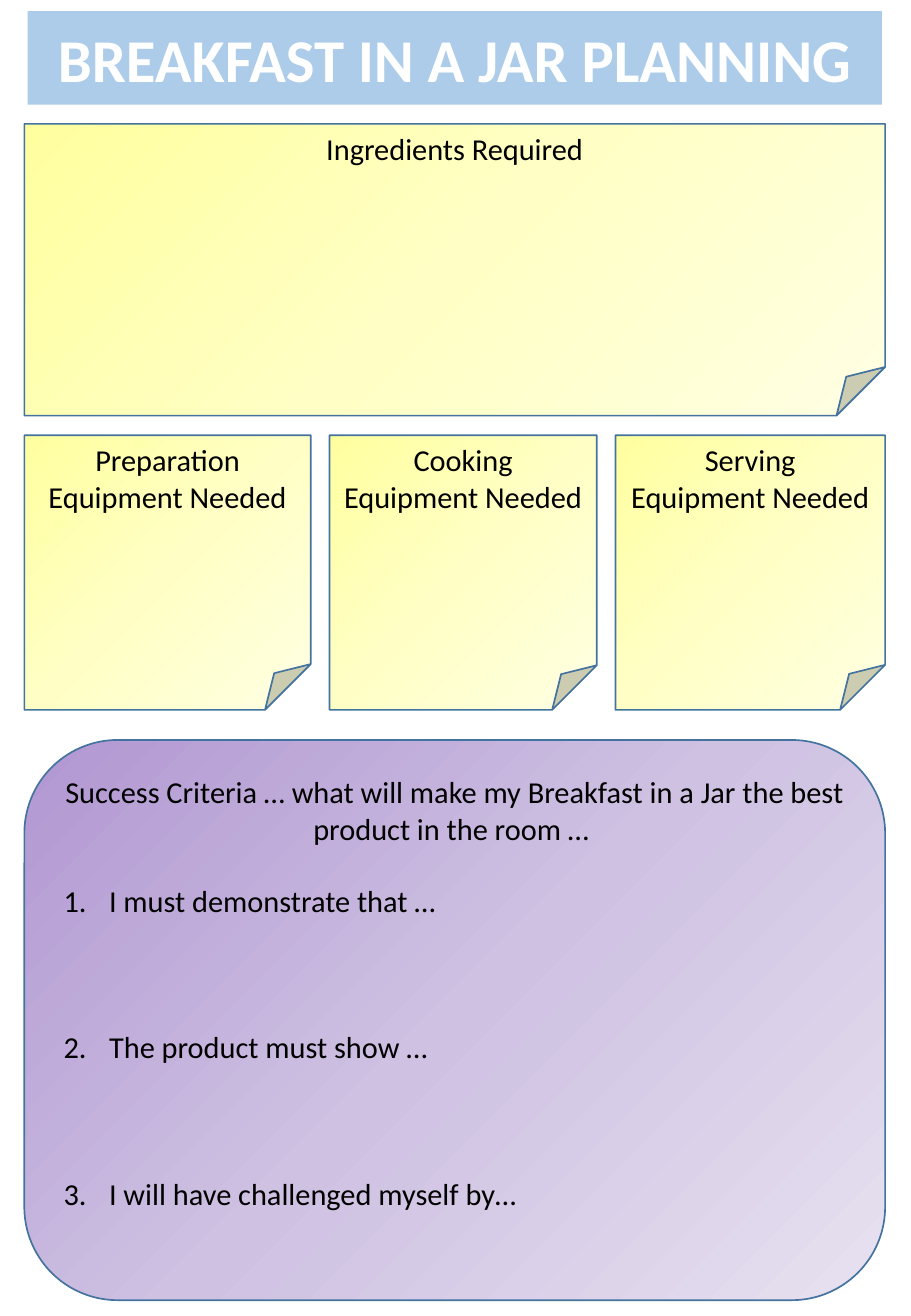
from copy import deepcopy

from lxml import etree
from pptx import Presentation
from pptx.dml import color
from pptx.enum import shapes, text
from pptx.oxml import ns
from pptx.util import Cm, Pt

COLORS = {
    "banner": "5B9BD5",
    "outline": "43739E",
    "ink": "000000",
    "white": "FFFFFF",
}
NOTE_YELLOW = ["FFFFA0", "FFFFC5", "FFFFE3"]
PANEL_PURPLE = ["B197D2", "CEC1E2", "E7E1F0"]
LEFT = 0.51
FULL_WIDTH = 18.0
GAP = 0.39


def add_line(para, words, size=18, ink="ink", bold=False):
    span = para.add_run()
    span.text = words
    span.font.name = "Calibri"
    span.font.size = Pt(size)
    span.font.bold = bold
    span.font.color.rgb = color.RGBColor.from_string(COLORS[ink])


def add_panel(kind, left, top, width, height, gradient, lines):
    panel = page.shapes.add_shape(kind, Cm(left), Cm(top), Cm(width), Cm(height))
    panel.shadow.inherit = False
    panel.line.color.rgb = color.RGBColor.from_string(COLORS["outline"])
    panel.line.width = Pt(1)
    panel.fill.gradient()
    panel.fill.gradient_angle = 315
    stop_list = panel._element.spPr.find(".//" + ns.qn("a:gsLst"))
    stop_list.insert(1, deepcopy(stop_list[0]))
    for index, stop in enumerate(panel.fill.gradient_stops):
        stop.position = index / 2
        stop.color.rgb = color.RGBColor.from_string(gradient[index])
    frame = panel.text_frame
    frame.word_wrap = True
    frame.vertical_anchor = text.MSO_ANCHOR.TOP
    for index, words in enumerate(lines):
        para = frame.add_paragraph() if index else frame.paragraphs[0]
        para.alignment = text.PP_ALIGN.CENTER
        add_line(para, words)
    return frame


deck = Presentation()
deck.slide_width = Cm(19.05)
deck.slide_height = Cm(27.51)
page = deck.slides.add_slide(deck.slide_layouts[5])

banner = page.shapes.title
banner.left, banner.top = Cm(0.58), Cm(0.23)
banner.width, banner.height = Cm(17.86), Cm(1.96)
outline = etree.Element(ns.qn("a:prstGeom"), prst="roundRect")
etree.SubElement(outline, ns.qn("a:avLst"))
banner._element.spPr.insert(1, outline)
banner.fill.solid()
banner.fill.fore_color.rgb = color.RGBColor.from_string(COLORS["banner"])
tint = banner._element.spPr.find(".//" + ns.qn("a:srgbClr"))
etree.SubElement(tint, ns.qn("a:alpha"), val="50000")
banner.text_frame.auto_size = text.MSO_AUTO_SIZE.NONE
banner.text_frame.word_wrap = True
banner.text_frame.vertical_anchor = text.MSO_ANCHOR.MIDDLE
heading = banner.text_frame.paragraphs[0]
heading.alignment = text.PP_ALIGN.CENTER
add_line(heading, "BREAKFAST IN A JAR PLANNING", 36, "white", True)

note = shapes.MSO_SHAPE.FOLDED_CORNER
add_panel(note, LEFT, 2.59, FULL_WIDTH, 6.1, NOTE_YELLOW, ["Ingredients Required"])

left = LEFT
for stage, width in [("Preparation", 5.99), ("Cooking", 5.59), ("Serving", 5.64)]:
    add_panel(note, left, 9.1, width, 5.74, NOTE_YELLOW, [stage, "Equipment Needed"])
    left += width + GAP

criteria = add_panel(
    shapes.MSO_SHAPE.ROUNDED_RECTANGLE, LEFT, 15.47, FULL_WIDTH, 11.71, PANEL_PURPLE,
    ["Success Criteria … what will make my Breakfast in a Jar the best product in the room … "],
)
goals = [
    ("I must demonstrate that …", 21.5),
    ("The product must show …", 65),
    ("I will have challenged myself by…", 65),
]
for goal, space in goals:
    para = criteria.add_paragraph()
    para.alignment = text.PP_ALIGN.LEFT
    para.space_before = Pt(space)
    props = para._p.get_or_add_pPr()
    props.set("marL", str(Cm(0.95)))
    props.set("indent", str(Cm(-0.95)))
    etree.SubElement(props, ns.qn("a:buFont"), typeface="+mj-lt")
    etree.SubElement(props, ns.qn("a:buAutoNum"), type="arabicPeriod")
    add_line(para, goal)

deck.save("out.pptx")
